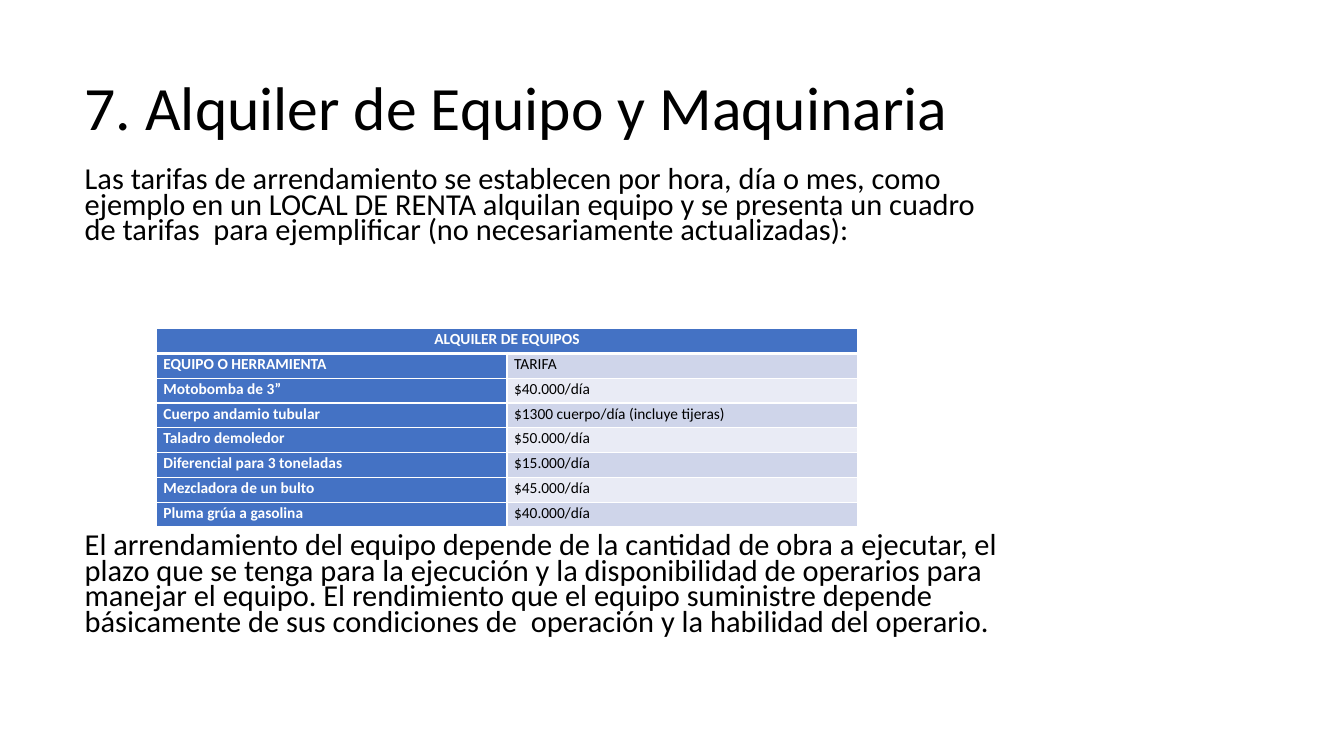
import dataclasses

import lxml.etree
import pptx
import pptx.dml.color
import pptx.enum.text
import pptx.oxml.ns
import pptx.util


@dataclasses.dataclass(frozen=True)
class Theme:
    font: str = "Calibri"
    ink: str = "000000"
    paper: str = "FFFFFF"
    accent: str = "4472C4"
    bands: tuple = ("E9EBF5", "CFD5EA")
    title_size: float = 44
    body_size: float = 21.7
    table_size: float = 11
    grid_line: float = 1
    header_line: float = 3


THEME = Theme()
SLIDE_WIDTH = pptx.util.Inches(13.33)
SLIDE_HEIGHT = pptx.util.Inches(7.5)
TEXT_LEFT, TEXT_WIDTH = 5.55, 70.5
TABLE_GAP = 207

TITLE = "7. Alquiler de Equipo y Maquinaria"
INTRODUCTION = (
    "Las tarifas de arrendamiento se establecen por hora, día o mes, como "
    "ejemplo en un LOCAL DE RENTA alquilan equipo y se presenta un cuadro de "
    "tarifas  para ejemplificar (no necesariamente actualizadas):"
)
CONCLUSION = (
    "El arrendamiento del equipo depende de la cantidad de obra a ejecutar, el "
    "plazo que se tenga para la ejecución y la disponibilidad de operarios para "
    "manejar el equipo. El rendimiento que el equipo suministre depende "
    "básicamente de sus condiciones de  operación y la habilidad del operario."
)
TABLE_HEADING = "ALQUILER DE EQUIPOS"
RATES = [
    ("EQUIPO O HERRAMIENTA", "TARIFA"),
    ("Motobomba de 3”", "$40.000/día"),
    ("Cuerpo andamio tubular", "$1300 cuerpo/día (incluye tijeras)"),
    ("Taladro demoledor", "$50.000/día"),
    ("Diferencial para 3 toneladas", "$15.000/día"),
    ("Mezcladora de un bulto", "$45.000/día"),
    ("Pluma grúa a gasolina", "$40.000/día"),
]


def percent_box(left, top, width, height):
    return (
        int(SLIDE_WIDTH * left / 100),
        int(SLIDE_HEIGHT * top / 100),
        int(SLIDE_WIDTH * width / 100),
        int(SLIDE_HEIGHT * height / 100),
    )


def rgb(colour):
    return pptx.dml.color.RGBColor.from_string(colour)


def format_paragraph(paragraph, size, colour, spacing, before=0, after=0, bold=False,
                     align=pptx.enum.text.PP_ALIGN.LEFT):
    paragraph.font.name = THEME.font
    paragraph.font.size = pptx.util.Pt(size)
    paragraph.font.bold = bold
    paragraph.font.color.rgb = rgb(colour)
    paragraph.line_spacing = spacing
    paragraph.space_before = pptx.util.Pt(before)
    paragraph.space_after = pptx.util.Pt(after)
    paragraph.alignment = align


def remove_bullet(paragraph):
    properties = paragraph._p.get_or_add_pPr()
    properties.set("marL", "0")
    properties.set("indent", "0")
    lxml.etree.SubElement(properties, pptx.oxml.ns.qn("a:buNone"))


def fill_placeholder(placeholder, top, height, texts, anchor):
    placeholder.left, placeholder.top, placeholder.width, placeholder.height = percent_box(
        TEXT_LEFT, top, TEXT_WIDTH, height)
    frame = placeholder.text_frame
    frame.text = "\n".join(texts)
    frame.word_wrap = True
    frame.auto_size = pptx.enum.text.MSO_AUTO_SIZE.NONE
    frame.vertical_anchor = anchor
    return frame.paragraphs


def add_title(slide):
    heading, = fill_placeholder(slide.shapes.title, 8.93, 11.47, [TITLE],
                                pptx.enum.text.MSO_ANCHOR.MIDDLE)
    format_paragraph(heading, THEME.title_size, THEME.ink, 0.9)


def add_body(slide):
    paragraphs = fill_placeholder(slide.placeholders[1], 21.7, 66.4,
                                  [INTRODUCTION, CONCLUSION],
                                  pptx.enum.text.MSO_ANCHOR.TOP)
    for paragraph, before in zip(paragraphs, (10, TABLE_GAP)):
        format_paragraph(paragraph, THEME.body_size, THEME.ink, 0.7, before)
        remove_bullet(paragraph)


def set_borders(cell, **widths):
    properties = cell._tc.get_or_add_tcPr()
    for side in "LRTB":
        width = pptx.util.Pt(widths.get(side, THEME.grid_line))
        line = lxml.etree.SubElement(properties, pptx.oxml.ns.qn(f"a:ln{side}"), w=str(width))
        fill = lxml.etree.SubElement(line, pptx.oxml.ns.qn("a:solidFill"))
        lxml.etree.SubElement(fill, pptx.oxml.ns.qn("a:srgbClr"), val=THEME.paper)


def format_cell(cell, text, fill, colour, bold, borders=None,
                align=pptx.enum.text.PP_ALIGN.LEFT):
    set_borders(cell, **(borders or {}))
    cell.fill.solid()
    cell.fill.fore_color.rgb = rgb(fill)
    cell.margin_left = cell.margin_right = pptx.util.Inches(0.07)
    cell.margin_top = cell.margin_bottom = 0
    cell.text = text
    format_paragraph(cell.text_frame.paragraphs[0], THEME.table_size, colour, 1.07,
                     after=8, bold=bold, align=align)


def add_rate_table(slide):
    rates = slide.shapes.add_table(len(RATES) + 1, 2,
                                   *percent_box(11.63, 43.47, 52.2, 26.27)).table
    rates.cell(0, 0).merge(rates.cell(0, 1))
    for column, heading in enumerate((TABLE_HEADING, "")):
        format_cell(rates.cell(0, column), heading, THEME.accent, THEME.paper, True,
                    {"B": THEME.header_line}, pptx.enum.text.PP_ALIGN.CENTER)
    for row, (equipment, rate) in enumerate(RATES, start=1):
        borders = {"T": THEME.header_line} if row == 1 else None
        format_cell(rates.cell(row, 0), equipment, THEME.accent, THEME.paper, True, borders)
        format_cell(rates.cell(row, 1), rate, THEME.bands[row % 2], THEME.ink, False, borders)


def main():
    presentation = pptx.Presentation()
    presentation.slide_width = SLIDE_WIDTH
    presentation.slide_height = SLIDE_HEIGHT
    slide = presentation.slides.add_slide(presentation.slide_layouts[1])
    add_title(slide)
    add_body(slide)
    add_rate_table(slide)
    presentation.save("out.pptx")


if __name__ == "__main__":
    main()
